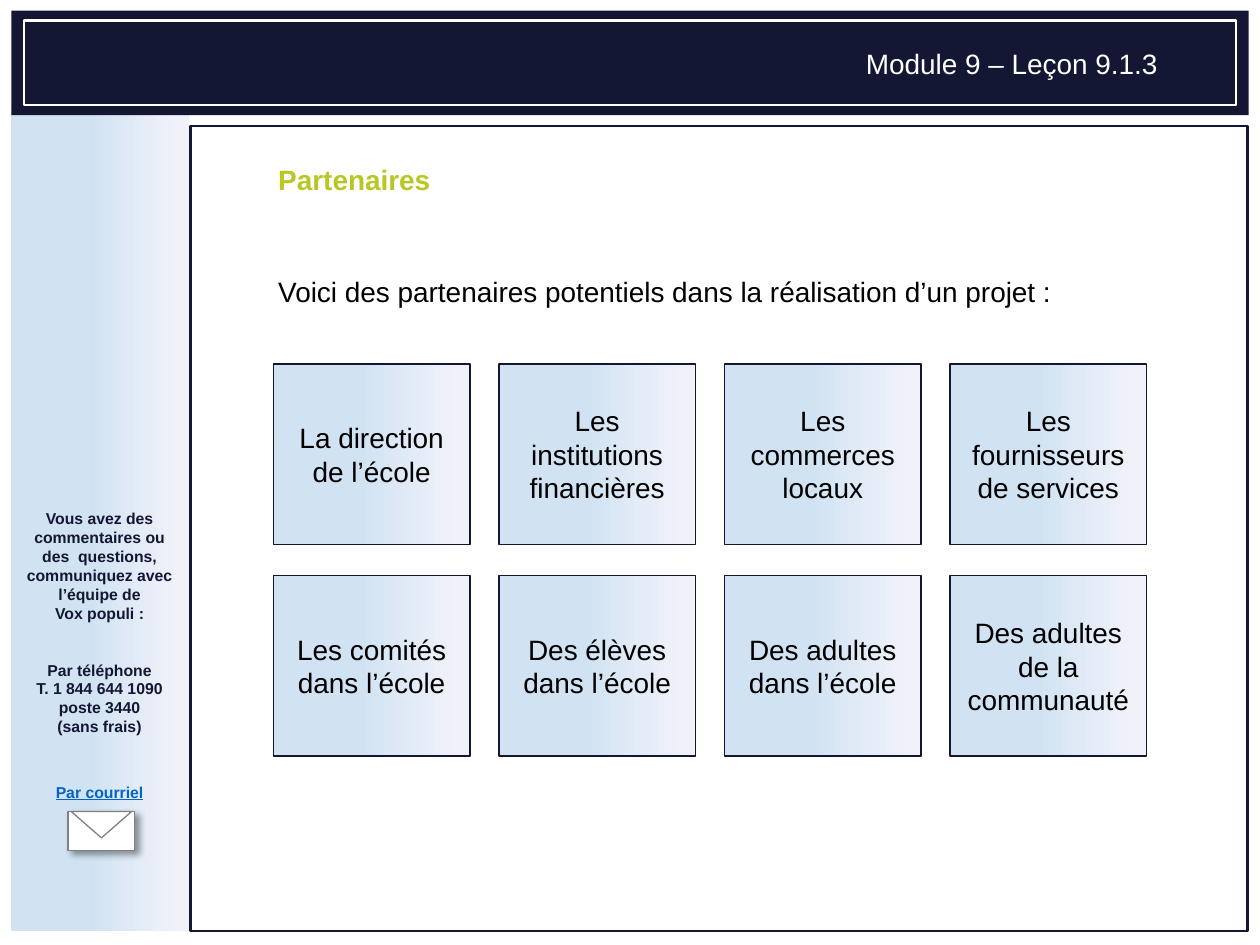
import dataclasses

import pptx
import pptx.dml.color
import pptx.enum.shapes
import pptx.enum.text
import pptx.oxml
import pptx.oxml.ns
import pptx.util

COLUMNS, ROWS = 100, 75
CELL = pptx.util.Inches(0.1)
FONT = "Arial"
COLORS = {
    "navy": "141733", "white": "FFFFFF", "black": "000000", "grey": "808080",
    "lime": "B8C724", "link": "0563C1",
}
PALE_BLUES = ((6, "F1F2F9"), (56, "D1E3F3"), (99, "CEE1F2"))
PARTNERS = (
    ("La direction de l’école", "Les institutions financières",
     "Les commerces locaux", "Les fournisseurs de services"),
    ("Les comités dans l’école", "Des élèves dans l’école",
     "Des adultes dans l’école", "Des adultes de la communauté"),
)
SHAPES = pptx.enum.shapes.MSO_SHAPE
ALIGN = pptx.enum.text.PP_ALIGN
ANCHOR = pptx.enum.text.MSO_ANCHOR


@dataclasses.dataclass
class Box:
    """An area measured in grid columns and rows."""
    left: float
    top: float
    width: float
    height: float

    def inner(self, left, top, width, height):
        """An area placed from this box's top left corner."""
        return Box(self.left + left, self.top + top, width, height)

    def lengths(self):
        return [round(value * CELL) for value in dataclasses.astuple(self)]


def rgb(name):
    return pptx.dml.color.RGBColor.from_string(COLORS[name])


def add_figure(shapes, box, fill=None, line=None, weight=0.75, kind=SHAPES.RECTANGLE):
    figure = shapes.add_shape(kind, *box.lengths())
    figure.shadow.inherit = False
    if fill:
        figure.fill.solid()
        figure.fill.fore_color.rgb = rgb(fill)
    else:
        figure.fill.background()
    if line:
        figure.line.color.rgb = rgb(line)
        figure.line.width = pptx.util.Pt(weight)
    else:
        figure.line.fill.background()
    return figure


def fill_pale_blue(figure):
    """Three-stop gradient, darkest on the left."""
    figure.fill.gradient()
    figure.fill.gradient_angle = 180
    stops = figure.element.spPr.find(".//" + pptx.oxml.ns.qn("a:gsLst"))
    for stop in list(stops):
        stops.remove(stop)
    for percent, color in PALE_BLUES:
        stops.append(pptx.oxml.parse_xml(
            f'<a:gs {pptx.oxml.ns.nsdecls("a")} pos="{percent * 1000}">'
            f'<a:srgbClr val="{color}"/></a:gs>'))


def cast_shadow(figure):
    effects = figure.element.spPr.find(pptx.oxml.ns.qn("a:effectLst"))
    effects.append(pptx.oxml.parse_xml(
        f'<a:outerShdw {pptx.oxml.ns.nsdecls("a")} blurRad="{pptx.util.Pt(4)}" '
        f'dist="{pptx.util.Pt(3)}" dir="2700000" algn="tl" rotWithShape="0">'
        '<a:srgbClr val="000000"><a:alpha val="40000"/></a:srgbClr></a:outerShdw>'))


def write(shape, *texts, size=16, color="black", bold=False, align=ALIGN.CENTER,
          anchor=ANCHOR.TOP, wrap=True):
    """Fills a shape with one paragraph per text and returns the paragraphs."""
    frame = shape.text_frame
    frame.word_wrap = wrap
    frame.vertical_anchor = anchor
    frame.text = "\n".join(texts)
    for para in frame.paragraphs:
        para.alignment = align
        para.font.name = FONT
        para.font.size = pptx.util.Pt(size)
        para.font.bold = bold
        para.font.color.rgb = rgb(color)
    return frame.paragraphs


def add_text(page, box, *texts, **style):
    return write(page.shapes.add_textbox(*box.lengths()), *texts, **style)


def add_banner(page, box):
    add_figure(page.shapes, box, fill="navy")
    add_figure(page.shapes, box.inner(1, 0.8, box.width - 2, box.height - 1.6),
               line="white", weight=1.5)
    add_text(page, box.inner(66.7, 2.35, 25.4, 3.7), "Module 9 – Leçon 9.1.3",
             color="white")


def add_envelope(page, box):
    group = page.shapes.add_group_shape()
    cast_shadow(add_figure(group.shapes, box, fill="white", line="grey"))
    flap = add_figure(group.shapes, box.inner(0.25, 0, box.width - 0.5, 2.1),
                      fill="white", line="grey", kind=SHAPES.ISOSCELES_TRIANGLE)
    flap.rotation = 180


def add_sidebar(page, box):
    fill_pale_blue(add_figure(page.shapes, box))
    contact = add_text(
        page, box.inner(0, 31.1, 14, 19.2),
        "Vous avez des commentaires ou des  questions, communiquez avec "
        "l’équipe de\vVox populi :",
        "Par téléphone\vT. 1 844 644 1090\vposte 3440\v(sans frais)",
        size=9, color="navy", bold=True)
    contact[1].space_before = pptx.util.Pt(21.5)
    mail = add_text(page, box.inner(2.5, 52.8, 9, 2.5), "Par courriel",
                    size=9, color="link", bold=True, wrap=False)
    mail[0].font.underline = True
    add_envelope(page, box.inner(4.5, 55.6, 5.3, 3.1))


def add_partner_grid(page, box, column_gap=2.3, row_gap=2.5):
    rows, columns = len(PARTNERS), len(PARTNERS[0])
    width = (box.width - column_gap * (columns - 1)) / columns
    height = (box.height - row_gap * (rows - 1)) / rows
    for row, names in enumerate(PARTNERS):
        for column, name in enumerate(names):
            place = box.inner(column * (width + column_gap), row * (height + row_gap),
                              width, height)
            card = add_figure(page.shapes, place, line="navy")
            fill_pale_blue(card)
            write(card, name, anchor=ANCHOR.MIDDLE)


def add_content(page, box):
    add_figure(page.shapes, box, line="navy", weight=1.5)
    add_text(page, box.inner(6, 2.5, 54.8, 3.5), "Partenaires", color="lime",
             bold=True, align=ALIGN.LEFT, anchor=ANCHOR.MIDDLE)
    intro = add_text(page, box.inner(6, 10, 71.9, 8.9),
                     "Voici des partenaires potentiels dans la réalisation "
                     "d’un projet :", align=ALIGN.LEFT)
    intro[0].line_spacing = 1.5
    add_partner_grid(page, box.inner(6.6, 18.9, 69.3, 31.1))


def main():
    deck = pptx.Presentation()
    deck.slide_width, deck.slide_height = COLUMNS * CELL, ROWS * CELL
    page = deck.slides.add_slide(deck.slide_layouts[6])
    add_sidebar(page, Box(0.9, 8.8, 14.1, 65.1))
    add_content(page, Box(15.1, 10, 83.9, 63.9))
    add_banner(page, Box(0.9, 0.85, 98.2, 8.3))
    deck.save("out.pptx")


if __name__ == "__main__":
    main()
